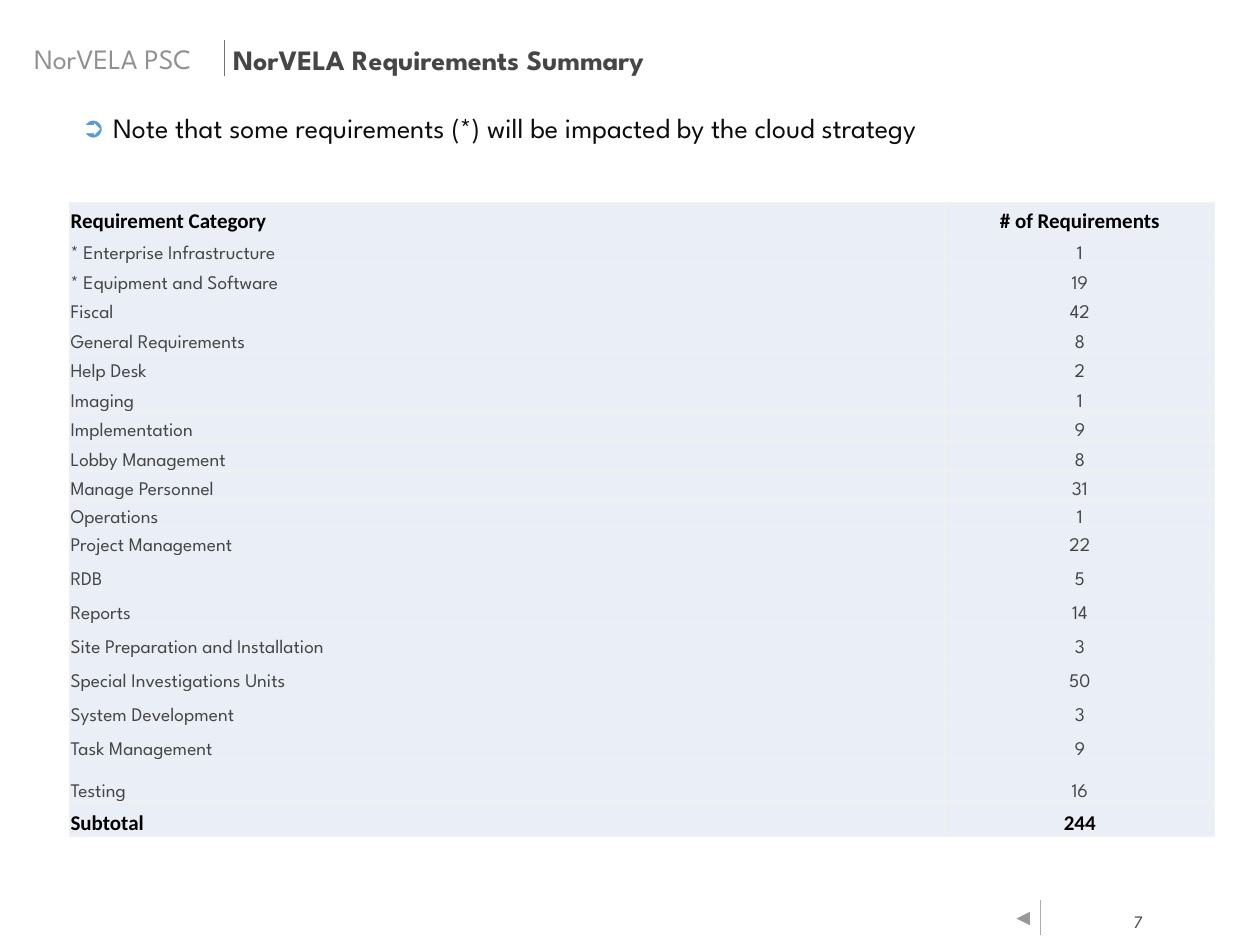
from lxml.etree import SubElement
from pptx import Presentation
from pptx.dml.color import RGBColor
from pptx.enum.shapes import MSO_CONNECTOR as Connector, MSO_SHAPE as Preset
from pptx.enum.text import MSO_ANCHOR as Anchor, PP_ALIGN as Align
from pptx.oxml.ns import qn
from pptx.util import Inches, Pt

SPARTAN, CALIBRI = "League Spartan", "Calibri"
DARK, BLACK, PALE = "464646", "000000", "EAEFF7"
SYSTEM = "NorVELA"

REQUIREMENTS = [
    ("Requirement Category", "# of Requirements"),
    ("* Enterprise Infrastructure", "1"),
    ("* Equipment and Software", "19"),
    ("Fiscal", "42"),
    ("General Requirements", "8"),
    ("Help Desk", "2"),
    ("Imaging", "1"),
    ("Implementation", "9"),
    ("Lobby Management", "8"),
    ("Manage Personnel", "31"),
    ("Operations", "1"),
    ("Project Management", "22"),
    ("RDB", "5"),
    ("Reports", "14"),
    ("Site Preparation and Installation", "3"),
    ("Special Investigations Units", "50"),
    ("System Development", "3"),
    ("Task Management", "9"),
    ("Testing", "16"),
    ("Subtotal", "244"),
]
ROW_HEIGHTS = [0.25] + [0.23, 0.24] * 4 + [0.23] + [0.22] * 2 + [0.27] * 6 + [0.34, 0.27]
COLUMN_WIDTHS = [6.95, 2.14]


def color(value):
    return RGBColor.from_string(value)


def write(frame, text, size=16, font=SPARTAN, ink=DARK, bold=False,
          align=Align.LEFT, spacing=None, before=None):
    """Put one formatted paragraph in a text frame."""
    para = frame.paragraphs[0]
    para.alignment = align
    if spacing:
        para.line_spacing = spacing
    if before:
        para.space_before = Pt(before)
    span = para.add_run()
    span.text = text
    span.font.size, span.font.name, span.font.bold = Pt(size), font, bold
    span.font.color.rgb = color(ink)
    return para


def add_text(page, box, text, insets=(0, 0.05), anchor=Anchor.TOP, wrap=True, **style):
    frame = page.shapes.add_textbox(*map(Inches, box)).text_frame
    frame.word_wrap = wrap
    frame.vertical_anchor = anchor
    frame.margin_left = frame.margin_right = Inches(insets[0])
    frame.margin_top = frame.margin_bottom = Inches(insets[1])
    return write(frame, text, **style)


def add_rule(page, x, top, bottom, ink):
    rule = page.shapes.add_connector(Connector.STRAIGHT, *map(Inches, (x, top, x, bottom)))
    rule.line.color.rgb = color(ink)
    rule.line.width = Pt(0.5)
    SubElement(rule._element.spPr, qn("a:effectLst"))


def add_header(page, left, top, width, height):
    """Section name, divider and slide title."""
    add_text(page, (left, top, 2.31, 0.37), f"{SYSTEM} PSC", anchor=Anchor.MIDDLE, ink="909090")
    add_rule(page, left + 1.51, top + 0.04, top + 0.32, "767171")
    title_left = left + 1.58
    add_text(page, (title_left, top + 0.02, left + width - title_left, height - 0.02),
             f"{SYSTEM} Requirements Summary", anchor=Anchor.MIDDLE, bold=True,
             spacing=0.9, before=10)


def add_note(page, *box):
    """Bulleted remark above the table."""
    para = add_text(page, box,
                    "Note that some requirements (*) will be impacted by the cloud strategy",
                    insets=(0.1, 0.05), ink="0D0D0D", spacing=0.9, before=10)
    props = para._p.get_or_add_pPr()
    props.set("marL", str(Inches(0.25)))
    props.set("indent", str(Inches(-0.25)))
    bullet_color = SubElement(props, qn("a:buClr"))
    SubElement(bullet_color, qn("a:srgbClr"), val="5B9BD5")
    SubElement(props, qn("a:buFont"), typeface=CALIBRI)
    SubElement(props, qn("a:buChar"), char="➲")


def add_borders(cell, ink):
    props = cell._tc.get_or_add_tcPr()
    for index, side in enumerate(("lnL", "lnR", "lnT", "lnB")):
        border = props.makeelement(qn(f"a:{side}"), {"w": str(Pt(1))})
        fill = SubElement(border, qn("a:solidFill"))
        SubElement(fill, qn("a:srgbClr"), val=ink)
        props.insert(index, border)


def add_requirements(page, *box):
    """Table of requirement counts."""
    table = page.shapes.add_table(len(REQUIREMENTS), len(COLUMN_WIDTHS),
                                  *map(Inches, box)).table
    for column, width in zip(table.columns, COLUMN_WIDTHS):
        column.width = Inches(width)
    last = len(REQUIREMENTS) - 1
    for r, (record, height) in enumerate(zip(REQUIREMENTS, ROW_HEIGHTS)):
        table.rows[r].height = Inches(height)
        if r in (0, last):
            style = dict(size=12, font=CALIBRI, ink=BLACK, bold=True)
        else:
            style = dict(size=11)
        for c, text in enumerate(record):
            cell = table.cell(r, c)
            cell.fill.solid()
            cell.fill.fore_color.rgb = color(PALE)
            cell.vertical_anchor = Anchor.BOTTOM
            cell.margin_left = cell.margin_right = cell.margin_top = Inches(0.01)
            cell.margin_bottom = 0
            add_borders(cell, "F0F0F0")
            write(cell.text_frame, text, align=Align.CENTER if c else Align.LEFT, **style)


def add_footer(page, left, top, width, height):
    """Back button, divider and page number."""
    button = page.shapes.add_shape(Preset.ACTION_BUTTON_FORWARD_OR_NEXT,
                                   *map(Inches, (left, top + 0.06, 0.14, 0.18)))
    button.rotation = 180
    button.shadow.inherit = False
    button.fill.solid()
    button.fill.fore_color.rgb = color("FFFFFF")
    button.line.fill.background()
    add_rule(page, left + 0.21, top, top + 0.28, "AFABAB")
    add_text(page, (left + width - 0.32, top + height - 0.24, 0.32, 0.24), "7",
             insets=(0.08, 0.04), wrap=False, size=10, align=Align.RIGHT)


def main():
    deck = Presentation()
    deck.slide_width, deck.slide_height = Inches(10), Inches(7.5)
    page = deck.slides.add_slide(deck.slide_layouts[6])
    add_footer(page, 8.05, 7.14, 1.1, 0.29)
    add_header(page, 0.27, 0.28, 8.89, 0.39)
    add_requirements(page, 0.55, 1.61, sum(COLUMN_WIDTHS), sum(ROW_HEIGHTS))
    add_note(page, 0.55, 0.86, 9.09, 0.34)
    deck.save("out.pptx")


if __name__ == "__main__":
    main()
